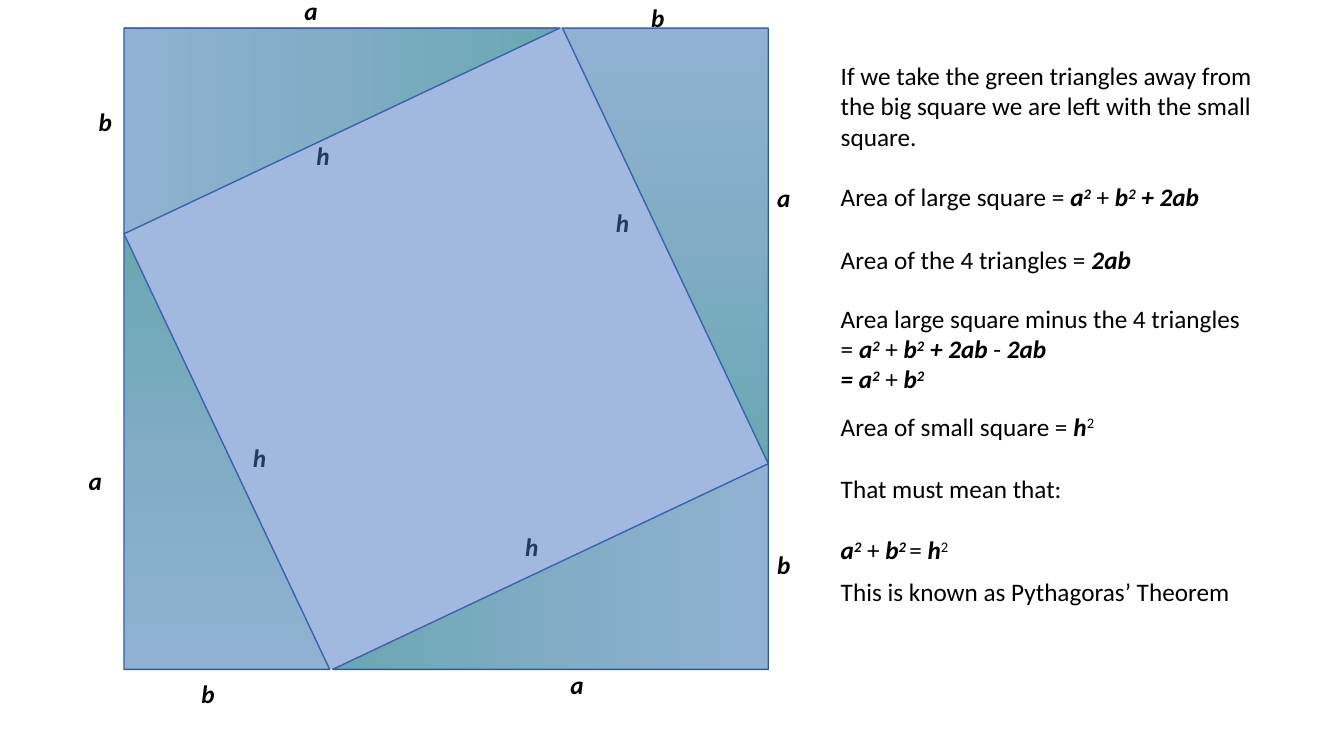
from dataclasses import dataclass

from lxml import etree
from pptx import Presentation
from pptx import util as u
from pptx.dml.color import RGBColor
from pptx.enum import shapes, text
from pptx.oxml.ns import qn

PX = 9144  # EMU in one px, 100 px to the inch
FONT = "Calibri"
COLORS = {
    "text": "000000",
    "square": "4472C4",
    "edge": "325491",
    "green_dark": "91DEA0",
    "green_mid": "BDE8C5",
    "green_light": "DFF3E3",
}
GRADIENT = {0: "green_dark", 50: "green_mid", 100: "green_light"}
LEG_B, LEG_A = 204, 432


@dataclass(frozen=True)
class Span:
    text: str
    strong: bool = False
    raised: bool = False


@dataclass(frozen=True)
class Triangle:
    left: int
    top: int
    turn: int


@dataclass(frozen=True)
class Label:
    letter: str
    left: int
    top: int


@dataclass(frozen=True)
class Note:
    top: int
    width: int
    height: int
    lines: tuple[tuple[Span, ...], ...]
    gap: int = 0  # points above each line after the first


def strong(words: str) -> Span:
    return Span(words, strong=True)


PLUS = Span(" + ")
A_SQUARED = (strong("a"), Span("2", True, True))
B_SQUARED = (strong("b"), Span("2", True, True))
H_SQUARED = (strong("h"), Span("2", raised=True))
SUM = (*A_SQUARED, PLUS, *B_SQUARED)
LARGE_AREA = (*SUM, strong(" + 2ab"))

TRIANGLES = [
    Triangle(123, 232, 0),
    Triangle(237, -86, 90),
    Triangle(444, 346, 270),
    Triangle(558, 28, 180),
]
LABELS = [
    Label("a", 292, -10), Label("b", 636, -3),
    Label("a", 761, 176), Label("b", 761, 540),
    Label("a", 556, 659), Label("b", 190, 668),
    Label("a", 78, 457), Label("b", 88, 101),
    Label("h", 304, 134), Label("h", 601, 201),
    Label("h", 511, 522), Label("h", 241, 434),
]
NOTES = [
    Note(55, 445, 131, ((Span(
        "If we take the green triangles away from the big square "
        "we are left with the small square."),),)),
    Note(175, 567, 101, ((Span("Area of large square = "), *LARGE_AREA),)),
    Note(237, 479, 71, ((Span("Area of the 4 triangles = "), strong("2ab")),)),
    Note(296, 479, 101, (
        (Span("Area large square minus the 4 triangles"),),
        (Span("= "), *LARGE_AREA, Span(" - "), strong("2ab")),
        (strong("= "), *SUM),
    )),
    Note(403, 479, 40, ((Span("Area of small square = "), *H_SQUARED),)),
    Note(465, 479, 101, (
        (Span("That must mean that:"),),
        (*A_SQUARED, PLUS, strong("b"), Span("2 ", True, True),
         Span("= "), *H_SQUARED),
    ), gap=22),
    Note(567, 479, 40, ((Span("This is known as Pythagoras’ Theorem"),),)),
]


def color(name: str) -> RGBColor:
    return RGBColor.from_string(COLORS[name])


def place(*lengths: int) -> list[u.Emu]:
    return [u.Emu(length * PX) for length in lengths]


def add_triangle(page, triangle: Triangle) -> None:
    shape = page.shapes.add_shape(
        shapes.MSO_SHAPE.RIGHT_TRIANGLE,
        *place(triangle.left, triangle.top, LEG_B, LEG_A))
    shape.rotation = triangle.turn
    shape.shadow.inherit = False
    shape.line.color.rgb = color("edge")
    shape.line.width = u.Pt(1)
    shape.fill.gradient()
    shape.fill.gradient_angle = 270
    stops = shape._element.spPr.find(".//" + qn("a:gsLst"))
    stops[:] = []
    for percent, name in GRADIENT.items():
        stop = etree.SubElement(stops, qn("a:gs"), pos=str(percent * 1000))
        etree.SubElement(stop, qn("a:srgbClr"), val=COLORS[name])


def add_square(page) -> None:
    shape = page.shapes.add_shape(
        shapes.MSO_SHAPE.RECTANGLE, *place(123, 27, 639, 637))
    shape.shadow.inherit = False
    shape.line.fill.background()
    shape.fill.solid()
    shape.fill.fore_color.rgb = color("square")
    tint = shape._element.spPr.find(qn("a:solidFill"))[0]
    etree.SubElement(tint, qn("a:alpha"), val="50000")


def add_text(page, left: int, top: int, width: int, height: int, *,
             lines: tuple[tuple[Span, ...], ...], gap: int = 0) -> None:
    box = page.shapes.add_textbox(*place(left, top, width, height))
    frame = box.text_frame
    frame.word_wrap = True
    frame.auto_size = text.MSO_AUTO_SIZE.SHAPE_TO_FIT_TEXT
    for index, line in enumerate(lines):
        para = frame.add_paragraph() if index else frame.paragraphs[0]
        if index and gap:
            para.space_before = u.Pt(gap)
        for span in line:
            run = para.add_run()
            run.text = span.text
            run.font.name = FONT
            run.font.size = u.Pt(18)
            run.font.color.rgb = color("text")
            run.font.bold = run.font.italic = span.strong
            if span.raised:
                run.font._element.set("baseline", "30000")


def main() -> None:
    deck = Presentation()
    deck.slide_width, deck.slide_height = place(1333, 750)
    page = deck.slides.add_slide(deck.slide_layouts.get_by_name("Blank"))
    for triangle in TRIANGLES:
        add_triangle(page, triangle)
    for label in LABELS:
        add_text(page, label.left, label.top, 70, 40,
                 lines=((strong(label.letter),),))
    add_square(page)  # its tint also covers the h labels
    for note in NOTES:
        add_text(page, 824, note.top, note.width, note.height,
                 lines=note.lines, gap=note.gap)
    deck.save("out.pptx")


if __name__ == "__main__":
    main()
